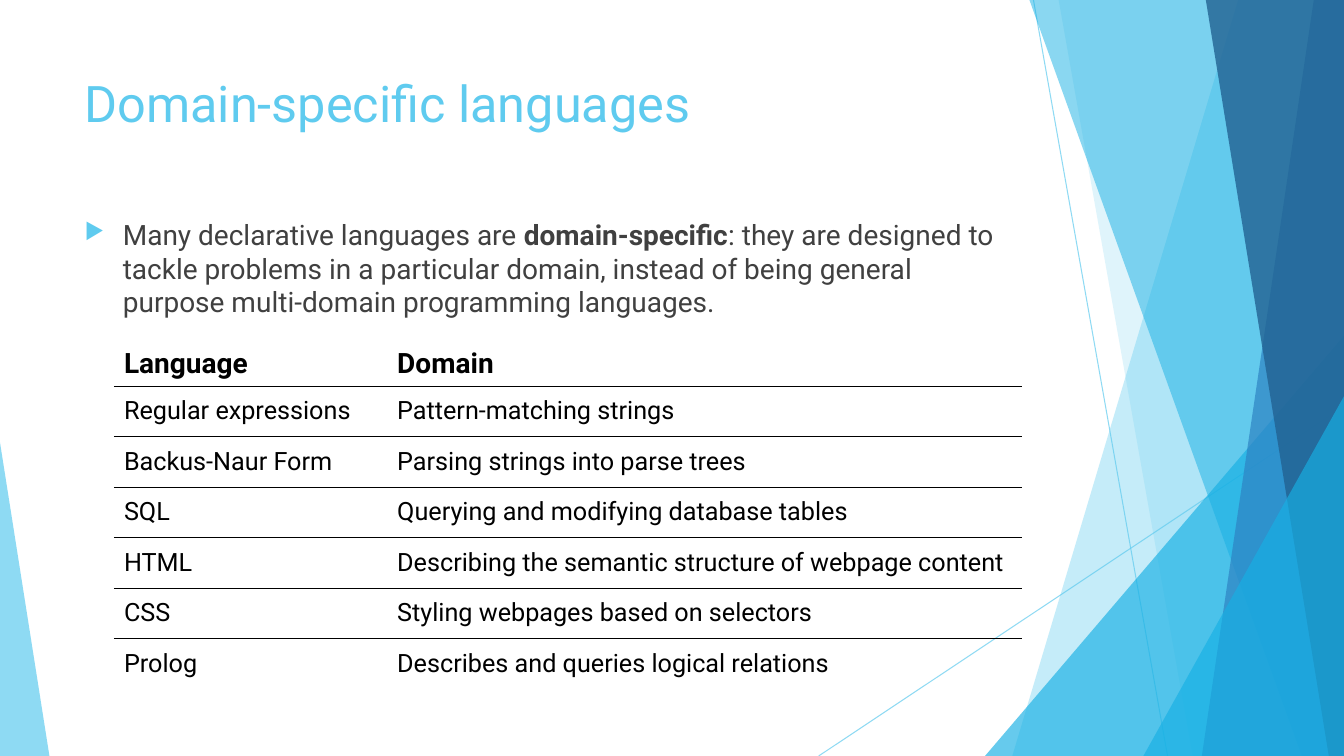
import pptx
import pptx.util
import pptx.dml.color
import pptx.enum.shapes
import pptx.enum.text
import pptx.oxml
import pptx.oxml.ns
from dataclasses import dataclass
from lxml import etree
from pptx.util import Inches

W, H = 13.33, 7.5
NO_TABLE_STYLE = "{2D5ABB26-0587-4C30-8999-92F81FD0307C}"


@dataclass(frozen=True)
class Theme:
    font: str = "Roboto"
    sky: str = "5FCBEF"
    cyan: str = "17B0E4"
    blue: str = "2E83C3"
    navy: str = "226292"
    body: str = "404040"
    black: str = "000000"
    title_size: int = 36
    text_size: int = 20
    cell_size: int = 18
    hairline: float = 0.75
    rule: int = 1


T = Theme()

LANGUAGES = [
    ("Language", "Domain"),
    ("Regular expressions", "Pattern-matching strings"),
    ("Backus-Naur Form", "Parsing strings into parse trees"),
    ("SQL", "Querying and modifying database tables"),
    ("HTML", "Describing the semantic structure of webpage content"),
    ("CSS", "Styling webpages based on selectors"),
    ("Prolog", "Describes and queries logical relations"),
]


def rgb(color):
    return pptx.dml.color.RGBColor.from_string(color)


def sub(parent, tag, **attrs):
    el = etree.SubElement(parent, pptx.oxml.ns.qn(tag))
    for name, value in attrs.items():
        el.set(name, str(value))
    return el


def set_alpha(sp, percent):
    """Make the first solid colour of a shape or line see-through."""
    color = next(sp._element.spPr.iter(pptx.oxml.ns.qn("a:srgbClr")))
    sub(color, "a:alpha", val=percent * 1000)


# Decoration
def tint(sp, color, percent):
    sp.shadow.inherit = False
    sp.fill.solid()
    sp.fill.fore_color.rgb = rgb(color)
    sp.line.fill.background()
    set_alpha(sp, percent)


def add_band(s, top_x, bottom_x, color, percent):
    """Fill from a slanted left side to the right edge of the slide."""
    points = [(top_x, 0), (W, 0), (W, H), (bottom_x, H)]
    corners = [(Inches(x), Inches(y)) for x, y in points]
    builder = s.shapes.build_freeform(*corners[0])
    builder.add_line_segments(corners[1:], close=True)
    tint(builder.convert_to_shape(), color, percent)


def add_triangle(s, left, top, width, apex, color, percent):
    """Stand a triangle on the bottom of the slide."""
    sp = s.shapes.add_shape(
        pptx.enum.shapes.MSO_SHAPE.ISOSCELES_TRIANGLE,
        Inches(left), Inches(top), Inches(width), Inches(H - top))
    sp.adjustments[0] = apex
    tint(sp, color, percent)


def add_hairline(s, x1, y1, x2, y2):
    sp = s.shapes.add_connector(
        pptx.enum.shapes.MSO_CONNECTOR.STRAIGHT,
        Inches(x1), Inches(y1), Inches(x2), Inches(y2))
    sp.line.color.rgb = rgb(T.sky)
    sp.line.width = pptx.util.Pt(T.hairline)
    set_alpha(sp, 70)
    sub(sp._element.spPr, "a:effectLst")


def add_facets(s):
    add_hairline(s, 10.25, 0, 11.58, H)
    add_hairline(s, W, 4.03, 8.12, H)
    add_band(s, 12.28, 10.04, T.sky, 36)
    add_band(s, 10.5, 11.83, T.sky, 20)
    add_triangle(s, 9.77, 3.33, 3.56, 1, T.cyan, 66)
    add_band(s, 10.21, 12.91, T.cyan, 50)
    add_band(s, 13.03, 11.92, T.blue, 70)
    add_band(s, 11.96, 13.18, T.navy, 80)
    add_triangle(s, 11.34, 3.93, 1.99, 1, T.cyan, 66)
    add_triangle(s, 0, 4.39, 0.49, 0, T.sky, 70)


# Text
def add_run(p, text, size, color, bold=False):
    r = p.add_run()
    r.text = text
    r.font.name = T.font
    r.font.size = pptx.util.Pt(size)
    r.font.bold = bold
    r.font.color.rgb = rgb(color)


def add_text(s, top, height):
    """Add a text box in the main column and return its paragraph."""
    sp = s.shapes.add_textbox(Inches(0.74), Inches(top), Inches(9.4), Inches(height))
    tf = sp.text_frame
    tf.word_wrap = True
    tf.vertical_anchor = pptx.enum.text.MSO_ANCHOR.TOP
    return tf.paragraphs[0]


def add_bullet(p):
    p.space_before = pptx.util.Pt(10)
    pPr = p._p.get_or_add_pPr()
    pPr.set("marL", str(Inches(0.38)))
    pPr.set("indent", str(-Inches(0.38)))
    sub(sub(pPr, "a:buClr"), "a:srgbClr", val=T.sky)
    sub(pPr, "a:buSzPct", val=80000)
    sub(pPr, "a:buChar", char="▶")


# Table
def add_rule_below(cell):
    tcPr = cell._tc.get_or_add_tcPr()
    ln = sub(tcPr, "a:lnB", w=pptx.util.Pt(T.rule))
    sub(sub(ln, "a:solidFill"), "a:srgbClr", val=T.black)
    tcPr.insert(0, ln)


def fill_cell(cell, text, header, last):
    cell.fill.background()
    if not header:
        cell.margin_top = cell.margin_bottom = Inches(0.1)
    cell.margin_left = cell.margin_right = Inches(0.1)
    size = T.text_size if header else T.cell_size
    add_run(cell.text_frame.paragraphs[0], text, size, T.black, header)
    if not last:
        add_rule_below(cell)


def add_language_table(s):
    header_h, row_h = 0.42, 0.49
    height = header_h + row_h * (len(LANGUAGES) - 1)
    frame = s.shapes.add_table(len(LANGUAGES), 2, Inches(1.13), Inches(3.4),
                               Inches(9.01), Inches(height))
    table = frame.table
    table.first_row = table.horz_banding = False
    table._tbl.tblPr.find(pptx.oxml.ns.qn("a:tableStyleId")).text = NO_TABLE_STYLE
    for column, width in zip(table.columns, (2.71, 6.3)):
        column.width = Inches(width)
    for i, texts in enumerate(LANGUAGES):
        table.rows[i].height = Inches(row_h if i else header_h)
        for j, text in enumerate(texts):
            fill_cell(table.cell(i, j), text, i == 0, i == len(LANGUAGES) - 1)


def main():
    prs = pptx.Presentation()
    prs.slide_width, prs.slide_height = Inches(W), Inches(H)
    s = prs.slides.add_slide(prs.slide_layouts[6])

    add_facets(s)

    # Title
    add_run(add_text(s, 0.67, 1.44), "Domain-specific languages", T.title_size, T.sky)

    # Introduction
    p = add_text(s, 2.11, 1.2)
    add_bullet(p)
    add_run(p, "Many declarative languages are ", T.text_size, T.body)
    add_run(p, "domain-specific", T.text_size, T.body, bold=True)
    add_run(p, ": they are designed to tackle problems in a particular domain, "
               "instead of being general purpose multi-domain programming languages.",
            T.text_size, T.body)

    add_language_table(s)
    prs.save("out.pptx")


if __name__ == "__main__":
    main()
